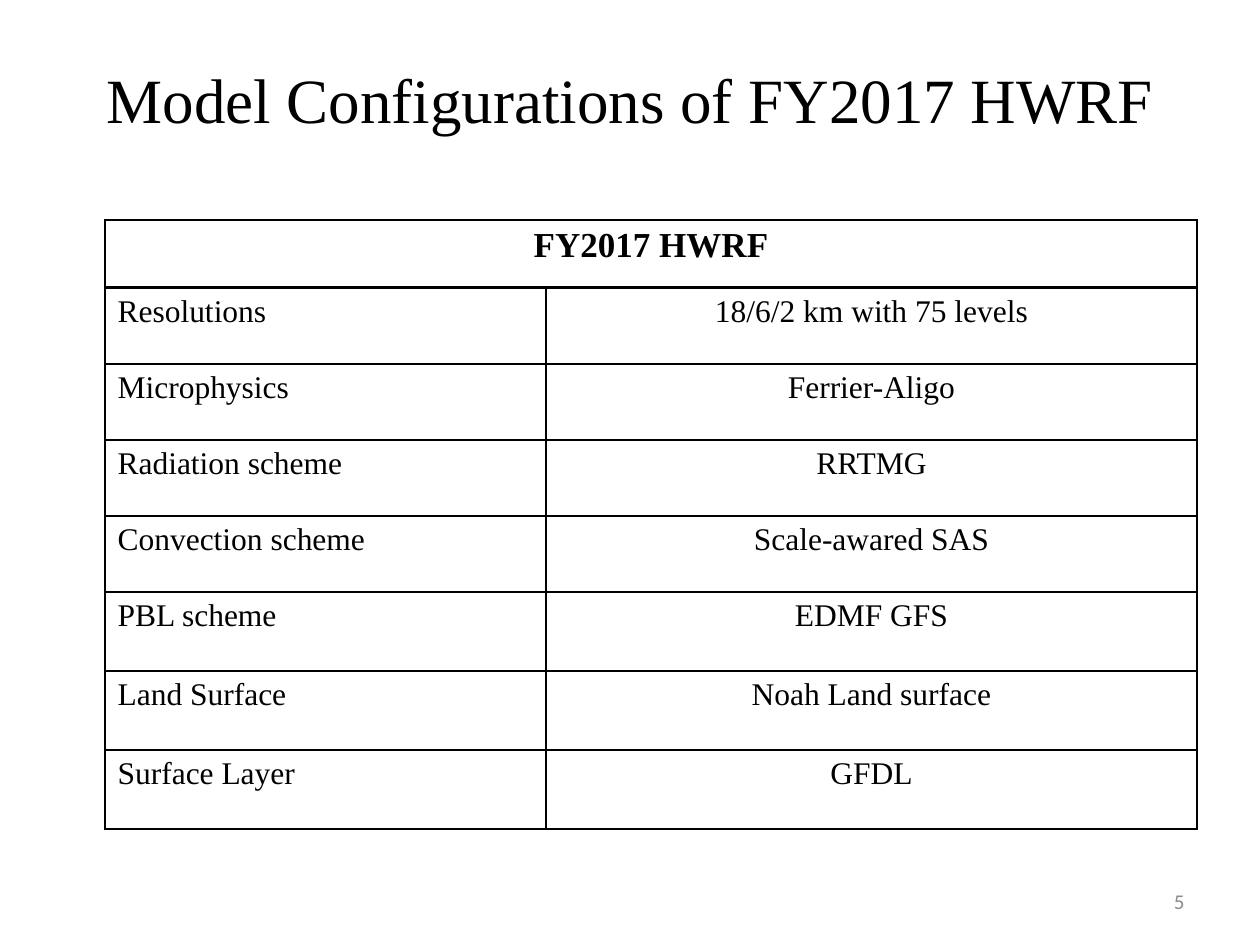
from dataclasses import dataclass

from lxml import etree
from pptx import Presentation
from pptx.dml.color import RGBColor
from pptx.enum.text import MSO_ANCHOR, PP_ALIGN
from pptx.oxml.ns import qn
from pptx.util import Emu, Pt

LEFT, CENTER, RIGHT = PP_ALIGN.LEFT, PP_ALIGN.CENTER, PP_ALIGN.RIGHT
MIDDLE = MSO_ANCHOR.MIDDLE
EMU_PER_PX = 914400 / 126


@dataclass(frozen=True)
class Theme:
    font: str = "Times New Roman"
    number_font: str = "Calibri"
    ink: str = "000000"
    paper: str = "FFFFFF"
    muted: str = "8C8C8C"
    title_size: int = 36
    header_size: int = 20
    body_size: int = 18
    number_size: int = 12
    thin: int = 1
    thick: int = 2


THEME = Theme()

HEADER = "FY2017 HWRF"
SETTINGS = [
    ("Resolutions", "18/6/2 km with 75 levels"),
    ("Microphysics", "Ferrier-Aligo"),
    ("Radiation scheme", "RRTMG"),
    ("Convection scheme", "Scale-awared SAS"),
    ("PBL scheme", "EDMF GFS"),
    ("Land Surface", "Noah Land surface"),
    ("Surface Layer", "GFDL"),
]
COLUMN_WIDTHS = [441, 651]
ROW_HEIGHTS = [68] + [76] * 4 + [79] * 3


def px(length):
    return Emu(round(length * EMU_PER_PX))


def write(text_frame, text, size, align, font=THEME.font, color=THEME.ink, bold=False):
    paragraph = text_frame.paragraphs[0]
    paragraph.alignment = align
    run = paragraph.add_run()
    run.text = text
    run.font.name = font
    run.font.size = Pt(size)
    run.font.bold = bold
    run.font.color.rgb = RGBColor.from_string(color)


def style_cell(cell, top, bottom):
    """Draw the four borders, then the fill that must follow them."""
    properties = cell._tc.get_or_add_tcPr()
    widths = {"a:lnL": THEME.thin, "a:lnR": THEME.thin, "a:lnT": top, "a:lnB": bottom}
    for tag, width in widths.items():
        line = etree.SubElement(properties, qn(tag), w=str(Pt(width)))
        fill = etree.SubElement(line, qn("a:solidFill"))
        etree.SubElement(fill, qn("a:srgbClr"), val=THEME.ink)
    cell.fill.solid()
    cell.fill.fore_color.rgb = RGBColor.from_string(THEME.paper)


def place_title(slide, left, top, width, height):
    title = slide.shapes.title
    title.left, title.top, title.width, title.height = map(px, (left, top, width, height))
    title.text_frame.vertical_anchor = MIDDLE
    write(title.text_frame, "Model Configurations of FY2017 HWRF", THEME.title_size, CENTER)


def place_settings_table(slide, left, top):
    frame = slide.shapes.add_table(
        len(ROW_HEIGHTS), len(COLUMN_WIDTHS),
        px(left), px(top), px(sum(COLUMN_WIDTHS)), px(sum(ROW_HEIGHTS)),
    )
    table = frame.table
    for column, width in zip(table.columns, COLUMN_WIDTHS):
        column.width = px(width)
    for row, height in zip(table.rows, ROW_HEIGHTS):
        row.height = px(height)

    # Borders: a thick rule separates the header from the body
    for index, row in enumerate(table.rows):
        for cell in row.cells:
            style_cell(
                cell,
                top=THEME.thick if index == 1 else THEME.thin,
                bottom=THEME.thick if index == 0 else THEME.thin,
            )

    # Header across both columns
    header = table.cell(0, 0)
    header.merge(table.cell(0, 1))
    write(header.text_frame, HEADER, THEME.header_size, CENTER, bold=True)

    # One setting per row
    for index, (name, value) in enumerate(SETTINGS, start=1):
        write(table.cell(index, 0).text_frame, name, THEME.body_size, LEFT)
        write(table.cell(index, 1).text_frame, value, THEME.body_size, CENTER)


def place_page_number(slide, left, top, width, height):
    box = slide.shapes.add_textbox(*map(px, (left, top, width, height)))
    box.text_frame.word_wrap = True
    box.text_frame.vertical_anchor = MIDDLE
    write(box.text_frame, "5", THEME.number_size, RIGHT, THEME.number_font, THEME.muted)


def main():
    presentation = Presentation()
    presentation.slide_width, presentation.slide_height = px(1260), px(945)
    slide = presentation.slides.add_slide(presentation.slide_layouts[5])
    place_title(slide, 63, 32, 1134, 133)
    place_settings_table(slide, 105, 220)
    place_page_number(slide, 903, 876, 294, 50)
    presentation.save("out.pptx")


if __name__ == "__main__":
    main()
